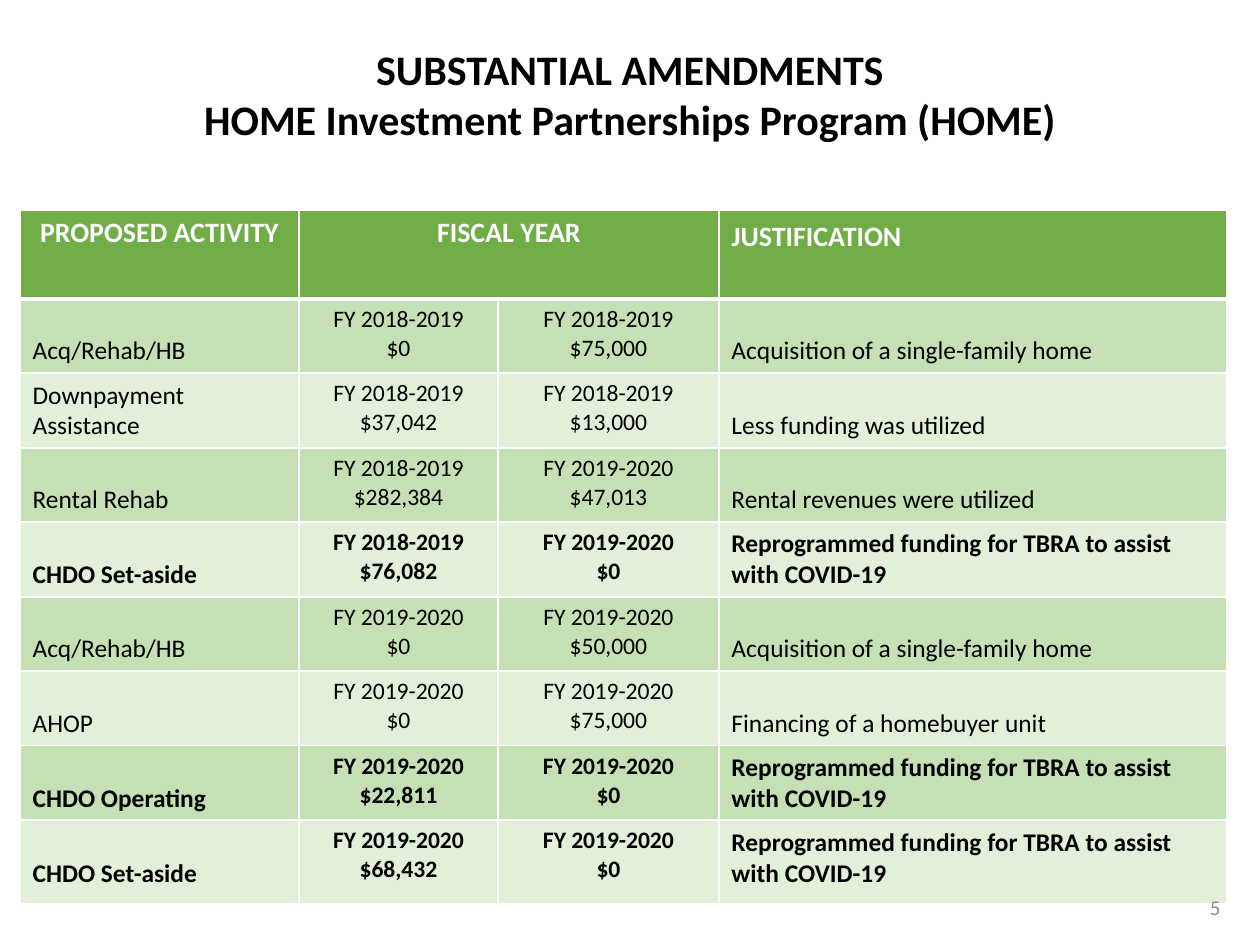
from lxml.etree import SubElement as Sub
from pptx import Presentation
from pptx.dml.color import RGBColor as Rgb
from pptx.enum.shapes import MSO_SHAPE as Geo
from pptx.enum.text import MSO_ANCHOR as Anchor, PP_ALIGN as Align
from pptx.oxml.ns import qn
from pptx.util import Emu, Pt

SCALE = 914400 // 126  # EMU in one px
INK = {"white": "FFFFFF", "black": "000000", "head": "70AD47",
       "dark": "C5E0B4", "light": "E2F0D9", "gray": "8C8C8C"}

COLS = [279, 199, 221, 508]
HEAD = ["PROPOSED ACTIVITY", "FISCAL YEAR", "", "JUSTIFICATION"]
HOME = "Acquisition of a single-family home"
COVID = "Reprogrammed funding for TBRA to assist with COVID-19"
OLD, NEW = "FY 2018-2019\n", "FY 2019-2020\n"
ROWS = [
    ("Acq/Rehab/HB", OLD + "$0", OLD + "$75,000", HOME),
    ("Downpayment Assistance", OLD + "$37,042", OLD + "$13,000",
     "Less funding was utilized"),
    ("Rental Rehab", OLD + "$282,384", NEW + "$47,013",
     "Rental revenues were utilized"),
    ("CHDO Set-aside", OLD + "$76,082", NEW + "$0", COVID),
    ("Acq/Rehab/HB", NEW + "$0", NEW + "$50,000", HOME),
    ("AHOP", NEW + "$0", NEW + "$75,000", "Financing of a homebuyer unit"),
    ("CHDO Operating", NEW + "$22,811", NEW + "$0", COVID),
    ("CHDO Set-aside", NEW + "$68,432", NEW + "$0", COVID),
]


def px(n):
    return Emu(n * SCALE)


def color(name):
    return Rgb.from_string(INK[name])


def write(frame, text, size, ink, align, bold=False):
    frame.text = text
    look = {"name": "Calibri", "size": Pt(size), "bold": bold}
    for para in frame.paragraphs:
        para.alignment = align
        for run in para.runs:
            for key, val in look.items():
                setattr(run.font, key, val)
            run.font.color.rgb = color(ink)


def edge(cell, top=1, base=1):
    props = cell._tc.get_or_add_tcPr()
    for side, wide in {"L": 1, "R": 1, "T": top, "B": base}.items():
        line = Sub(props, qn("a:ln" + side), w=str(Pt(wide)))
        fill = Sub(line, qn("a:solidFill"))
        Sub(fill, qn("a:srgbClr"), val=INK["white"])


def paint(cell, ink):
    cell.fill.solid()
    cell.fill.fore_color.rgb = color(ink)


def add_head(table):
    for col, text in enumerate(HEAD):
        cell = table.cell(0, col)
        edge(cell, base=3)
        paint(cell, "head")
        last = col == len(HEAD) - 1
        if text:
            write(cell.text_frame, text, 16, "white",
                  Align.LEFT if last else Align.CENTER, True)
        if last:
            cell.margin_top = px(10)
    table.cell(0, 1).merge(table.cell(0, 2))


def add_row(table, row, data):
    bold = data[0].startswith("CHDO")
    for col, text in enumerate(data):
        cell = table.cell(row, col)
        edge(cell, top=3 if row == 1 else 1)
        paint(cell, "dark" if row % 2 else "light")
        if col in (1, 2):
            write(cell.text_frame, text, 13.5, "black", Align.CENTER, bold)
        else:
            write(cell.text_frame, text, 14.5, "black", Align.LEFT, bold)
            cell.vertical_anchor = Anchor.BOTTOM
            if row == len(ROWS):
                cell.margin_bottom = px(15)


def add_grid(slide):
    highs = [89] + [74 + i % 2 for i in range(len(ROWS) - 1)] + [84]
    table = slide.shapes.add_table(
        len(highs), len(COLS), px(20), px(210),
        px(sum(COLS)), px(sum(highs))).table
    table.horz_banding = False
    for col, wide in zip(table.columns, COLS):
        col.width = px(wide)
    for row, high in zip(table.rows, highs):
        row.height = px(high)
    add_head(table)
    for row, data in enumerate(ROWS, 1):
        add_row(table, row, data)


def add_page(slide):
    box = slide.shapes.add_textbox(px(1154), px(882), px(79), px(50))
    box.text_frame.word_wrap = True
    box.text_frame.vertical_anchor = Anchor.MIDDLE
    write(box.text_frame, "5", 12, "gray", Align.RIGHT)


def add_title(slide):
    box = slide.shapes.add_shape(
        Geo.RECTANGLE, 0, px(37), px(1260), px(115))
    box.shadow.inherit = False
    paint(box, "white")
    box.line.fill.background()
    box.text_frame.vertical_anchor = Anchor.TOP
    write(box.text_frame,
          "SUBSTANTIAL AMENDMENTS\nHOME Investment Partnerships Program (HOME)",
          24, "black", Align.CENTER, True)


def main():
    deck = Presentation()
    deck.slide_width, deck.slide_height = px(1260), px(945)
    slide = deck.slides.add_slide(deck.slide_layouts[6])
    # Table of amendments
    add_grid(slide)
    # Page number and heading
    add_page(slide)
    add_title(slide)
    deck.save("out.pptx")


if __name__ == "__main__":
    main()
